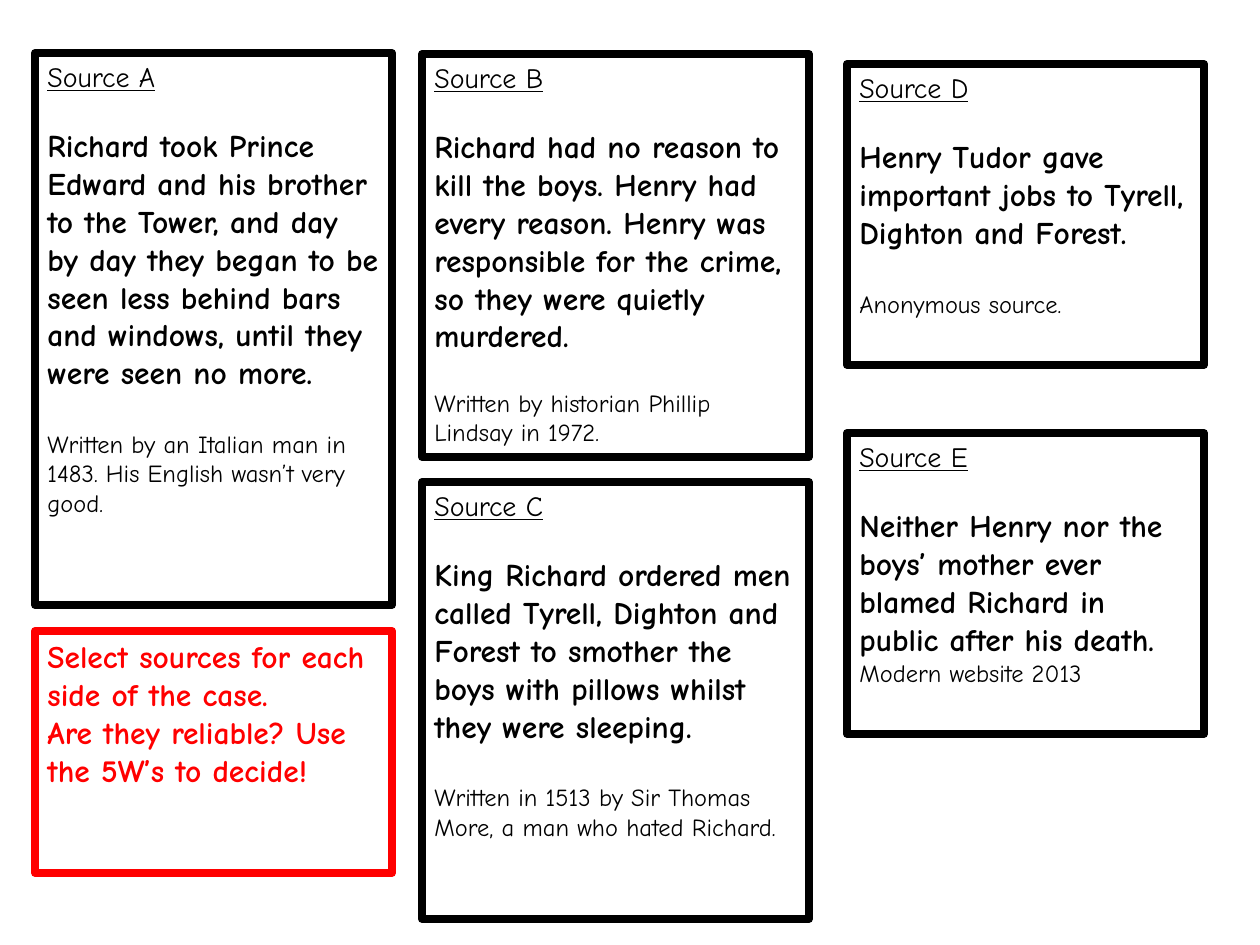
"""Build a slide of historical source cards and a task box."""
import pptx
import pptx.dml.color
import pptx.enum.shapes
import pptx.enum.text
import pptx.util

PX = 914400 // 126
FONT = "Comic Neue"
BLACK = pptx.dml.color.RGBColor(0, 0, 0)
RED = pptx.dml.color.RGBColor(255, 0, 0)
TITLE_SIZE, QUOTE_SIZE, ORIGIN_SIZE = 16, 18, 14
LINE_HEIGHT = 1.2
LEFT, MIDDLE, RIGHT = 35, 422, 847
NARROW, WIDE = 357, 387

SOURCES = [
    ("A", (LEFT, 53, NARROW, 552),
     "Richard took Prince Edward and his brother to the Tower, and day by day "
     "they began to be seen less behind bars and windows, until they were seen no more.",
     "Written by an Italian man in 1483. His English wasn’t very good.", 18),
    ("B", (MIDDLE, 54, WIDE, 403),
     "Richard had no reason to kill the boys. Henry had every reason. Henry was "
     "responsible for the crime, so they were quietly murdered.",
     "Written by historian Phillip Lindsay in 1972.", 16),
    ("C", (MIDDLE, 482, WIDE, 437),
     "King Richard ordered men called Tyrell, Dighton and Forest to smother the "
     "boys with pillows whilst they were sleeping.",
     "Written in 1513 by Sir Thomas More, a man who hated Richard.", 18),
    ("D", (RIGHT, 64, NARROW, 301),
     "Henry Tudor gave important jobs to Tyrell, Dighton and Forest.",
     "Anonymous source.", 18),
    ("E", (RIGHT, 433, NARROW, 301),
     "Neither Henry nor the boys’ mother ever blamed Richard in public after his death.",
     "Modern website 2013", 0),
]
TASK = ["Select sources for each side of the case.",
        "Are they reliable? Use the 5W’s to decide!"]


def add_box(slide, bounds, color, texts):
    """Add an outlined box and return its left-aligned paragraphs."""
    box = slide.shapes.add_shape(pptx.enum.shapes.MSO_SHAPE.RECTANGLE,
                                 *(length * PX for length in bounds))
    box.shadow.inherit = False
    box.fill.background()
    box.line.color.rgb = color
    box.line.width = pptx.util.Pt(4.5)
    frame = box.text_frame
    frame.word_wrap = True
    frame.vertical_anchor = pptx.enum.text.MSO_ANCHOR.TOP
    frame.text = "\n".join(texts)
    for paragraph in frame.paragraphs:
        paragraph.alignment = pptx.enum.text.PP_ALIGN.LEFT
    return frame.paragraphs


def style(paragraph, size, color, bold=False, underline=False, gap=0):
    """Format a paragraph, leaving a gap of one line of the given size above it."""
    paragraph.space_before = pptx.util.Pt(gap * LINE_HEIGHT)
    for run in paragraph.runs:
        run.font.name = FONT
        run.font.size = pptx.util.Pt(size)
        run.font.color.rgb = color
        run.font.bold = bold
        run.font.underline = underline


def add_source(slide, letter, bounds, quote, origin, origin_gap):
    """Add a card with a source's title, quotation and origin."""
    heading, quotation, credit = add_box(
        slide, bounds, BLACK, [f"Source {letter}", quote, origin])
    style(heading, TITLE_SIZE, BLACK, underline=True)
    style(quotation, QUOTE_SIZE, BLACK, bold=True, gap=TITLE_SIZE)
    style(credit, ORIGIN_SIZE, BLACK, gap=origin_gap)


def add_task(slide, bounds, instructions):
    """Add the red box with the task for the class."""
    for instruction in add_box(slide, bounds, RED, instructions):
        style(instruction, QUOTE_SIZE, RED, bold=True)


def main():
    """Create and save the slide."""
    deck = pptx.Presentation()
    deck.slide_width = pptx.util.Inches(10)
    deck.slide_height = pptx.util.Inches(7.5)
    slide = deck.slides.add_slide(deck.slide_layouts[6])
    for source in SOURCES:
        add_source(slide, *source)
    add_task(slide, (LEFT, 631, NARROW, 242), TASK)
    deck.save("out.pptx")


if __name__ == "__main__":
    main()
